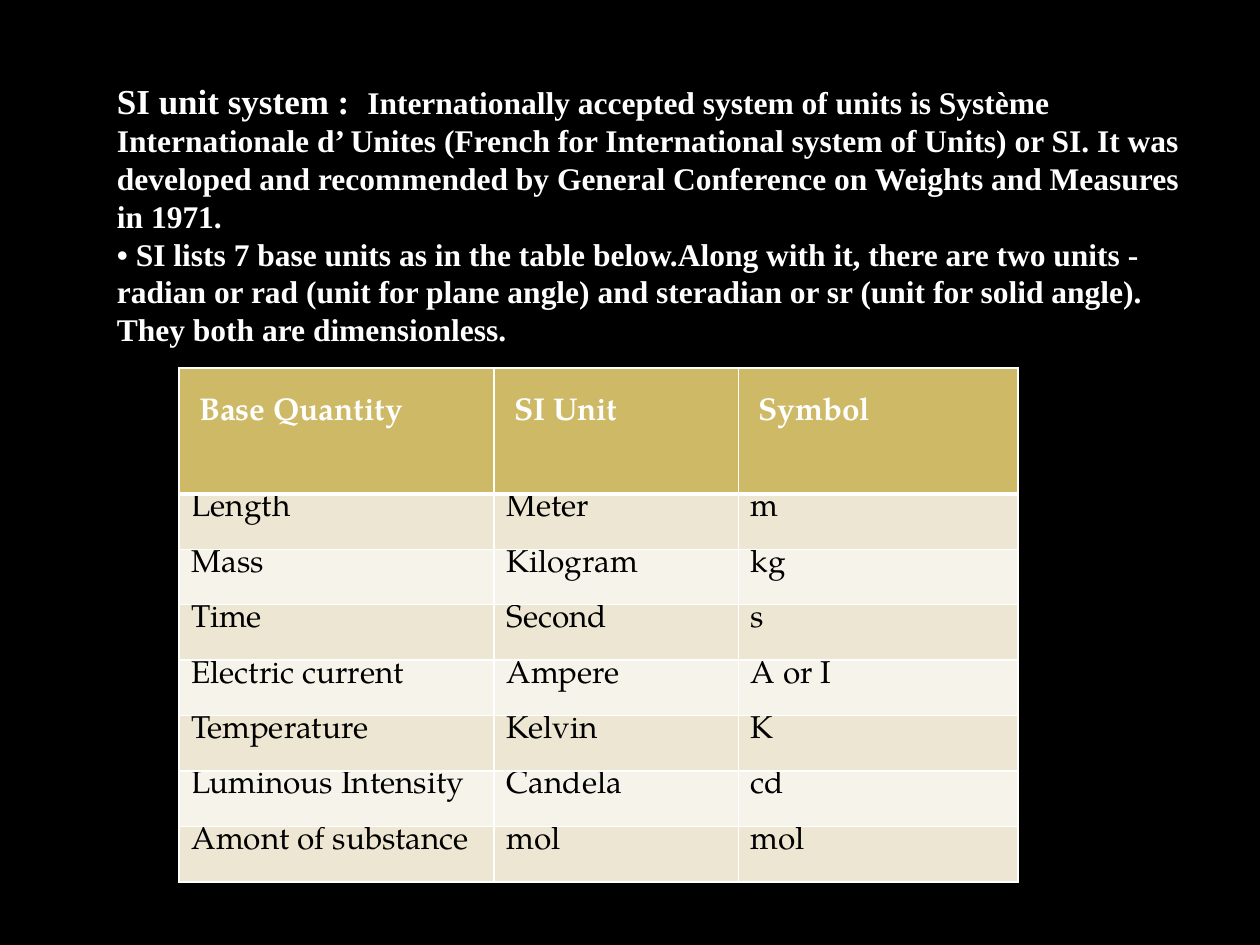
from lxml.etree import SubElement
from pptx import Presentation
from pptx.dml.color import RGBColor as RGB
from pptx.oxml.ns import qn
from pptx.util import Inches, Pt

INTRO = [
    [("SI unit system :  ", 20),
     ("Internationally accepted system of units is Système Internationale "
      "d’ Unites (French for International system of Units) or SI. It was "
      "developed and recommended by General Conference on Weights and "
      "Measures in 1971.", 18)],
    [("• SI lists 7 base units as in the table below.Along with it, there "
      "are two units - radian or rad (unit for plane angle) and steradian "
      "or sr (unit for solid angle). They both are dimensionless.", 18)],
]
UNITS = [
    ("Base Quantity", "SI Unit", "Symbol"),
    ("Length", "Meter", "m"),
    ("Mass", "Kilogram", "kg"),
    ("Time", "Second", "s"),
    ("Electric current", "Ampere", "A or I"),
    ("Temperature", "Kelvin", "K"),
    ("Luminous Intensity", "Candela", "cd"),
    ("Amont of substance", "mol", "mol"),
]
WIDTHS = [2.5, 1.94, 2.22]
HEAD_H, ROW_H = 1.0, 0.44
COLORS = {"back": "000000", "white": "FFFFFF", "ink": "000000",
          "head": "CEB966", "odd": "EDE6D3", "even": "F6F3EA"}


def color(name):
    return RGB.from_string(COLORS[name])


def set_font(font, face, tone, bold):
    font.name, font.bold = face, bold
    font.color.rgb = color(tone)


def add_edges(cell, low):
    """Draw white cell borders, the bottom one low points wide."""
    props = cell._tc.get_or_add_tcPr()
    for side, width in (("L", 1), ("R", 1), ("T", 1), ("B", low)):
        line = SubElement(props, qn("a:ln" + side), w=str(Pt(width)))
        fill = SubElement(line, qn("a:solidFill"))
        SubElement(fill, qn("a:srgbClr"), val=COLORS["white"])


def add_intro(slide):
    box = slide.shapes.add_textbox(
        Inches(0.83), Inches(0.58), Inches(8.67), Inches(2.25))
    frame = box.text_frame
    frame.word_wrap = True
    for i, parts in enumerate(INTRO):
        para = frame.add_paragraph() if i else frame.paragraphs[0]
        set_font(para.font, "Times New Roman", "white", True)
        for text, size in parts:
            run = para.add_run()
            run.text = text
            run.font.size = Pt(size)


def add_units(slide):
    heights = [HEAD_H] + [ROW_H] * (len(UNITS) - 1)
    table = slide.shapes.add_table(
        len(UNITS), len(WIDTHS), Inches(1.42), Inches(2.92),
        Inches(sum(WIDTHS)), Inches(sum(heights))).table
    for col, width in zip(table.columns, WIDTHS):
        col.width = Inches(width)
    for r, (row, height) in enumerate(zip(UNITS, heights)):
        table.rows[r].height = Inches(height)
        head = r == 0
        for c, text in enumerate(row):
            cell = table.cell(r, c)
            add_edges(cell, 3 if head else 1)
            cell.fill.solid()
            cell.fill.fore_color.rgb = color(
                "head" if head else "odd" if r % 2 else "even")
            cell.margin_left = Inches(0.16 if head else 0.1)
            cell.margin_top = Inches(0.24 if head else 0)
            cell.margin_bottom = 0
            cell.text = text
            font = cell.text_frame.paragraphs[0].font
            set_font(font, "TeX Gyre Pagella",
                     "white" if head else "ink", head)
            font.size = Pt(18)


def main():
    deck = Presentation()
    deck.slide_width, deck.slide_height = Inches(10), Inches(7.5)
    slide = deck.slides.add_slide(deck.slide_layouts[6])
    slide.background.fill.solid()
    slide.background.fill.fore_color.rgb = color("back")
    add_intro(slide)
    add_units(slide)
    deck.save("out.pptx")


if __name__ == "__main__":
    main()
